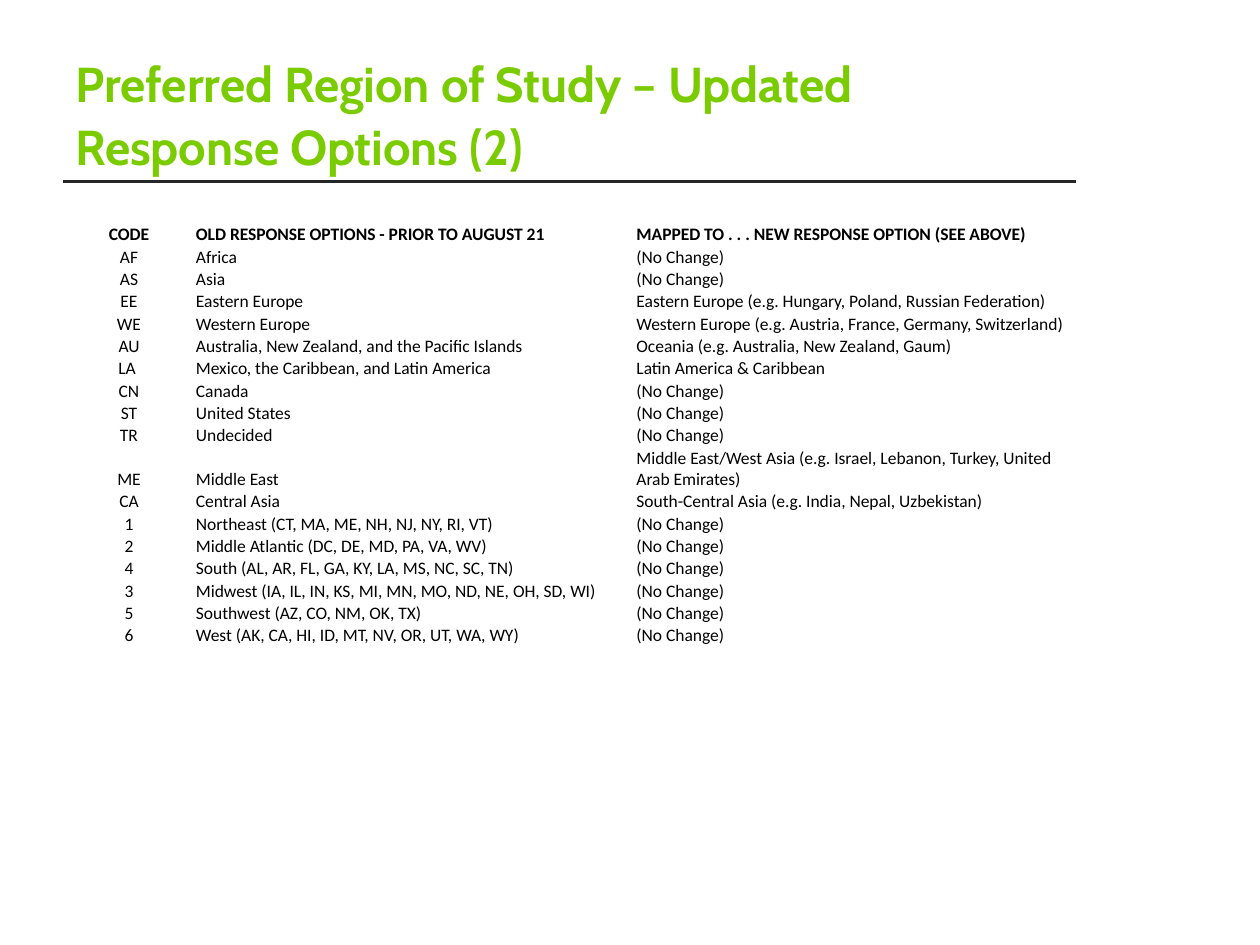
from pptx import Presentation
from pptx.dml.color import RGBColor
from pptx.enum.shapes import MSO_CONNECTOR
from pptx.enum.text import MSO_ANCHOR, PP_ALIGN
from pptx.oxml.ns import qn
from pptx.util import Cm, Pt
from lxml.etree import SubElement

TITLE = "Preferred Region of Study – Updated Response Options (2)"
HEADER = (
    "CODE",
    "OLD RESPONSE OPTIONS - PRIOR TO AUGUST 21",
    "MAPPED TO . . . NEW RESPONSE OPTION (SEE ABOVE)",
)
SAME = "(No Change)"
REGIONS = [
    ("AF", "Africa", SAME),
    ("AS", "Asia", SAME),
    ("EE", "Eastern Europe", "Eastern Europe (e.g. Hungary, Poland, Russian Federation)"),
    ("WE", "Western Europe", "Western Europe (e.g. Austria, France, Germany, Switzerland)"),
    ("AU", "Australia, New Zealand, and the Pacific Islands",
     "Oceania (e.g. Australia, New Zealand, Gaum)"),
    ("LA ", "Mexico, the Caribbean, and Latin America", "Latin America & Caribbean"),
    ("CN", "Canada", SAME),
    ("ST", "United States", SAME),
    ("TR", "Undecided", SAME),
    ("ME", "Middle East",
     "Middle East/West Asia (e.g. Israel, Lebanon, Turkey, United Arab Emirates)"),
    ("CA", "Central Asia", "South-Central Asia (e.g. India, Nepal, Uzbekistan)"),
    ("1", "Northeast (CT, MA, ME, NH, NJ, NY, RI, VT)", SAME),
    ("2", "Middle Atlantic (DC, DE, MD, PA, VA, WV)", SAME),
    ("4", "South (AL, AR, FL, GA, KY, LA, MS, NC, SC, TN)", SAME),
    ("3", "Midwest (IA, IL, IN, KS, MI, MN, MO, ND, NE, OH, SD, WI)", SAME),
    ("5", "Southwest (AZ, CO, NM, OK, TX)", SAME),
    ("6", "West (AK, CA, HI, ID, MT, NV, OR, UT, WA, WY)", SAME),
]
THEME = {
    "title": {"font": "Cabin", "size": 28, "color": "7ACC00"},
    "table": {"font": "Calibri", "size": 10, "color": "000000"},
    "rule": {"width": 1.5, "color": "262626"},
}
LEFT, WIDTH = 1.27, 20.42
TITLE_TOP, TITLE_HEIGHT = 0.89, 2.77
TABLE_TOP = 4.5
COLUMN_WIDTHS = (2.66, 8.88, 8.88)
LINE_HEIGHT = 0.43
CELL_INSET = 0.02
WRAP_LENGTH = 60


def add_span(para, text, style, bold):
    span = para.add_run()
    span.text = text
    span.font.name = style["font"]
    span.font.size = Pt(style["size"])
    span.font.bold = bold
    span.font.color.rgb = RGBColor.from_string(style["color"])


def add_rule(page):
    bottom = Cm(TITLE_TOP + TITLE_HEIGHT)
    rule = page.shapes.add_connector(
        MSO_CONNECTOR.STRAIGHT, Cm(LEFT), bottom, Cm(LEFT + WIDTH), bottom)
    rule.line.width = Pt(THEME["rule"]["width"])
    rule.line.color.rgb = RGBColor.from_string(THEME["rule"]["color"])
    SubElement(rule.element.spPr, qn("a:effectLst"))


def add_title(page):
    box = page.shapes.add_textbox(Cm(LEFT), Cm(TITLE_TOP), Cm(WIDTH), Cm(TITLE_HEIGHT))
    frame = box.text_frame
    frame.word_wrap = True
    frame.vertical_anchor = MSO_ANCHOR.BOTTOM
    para = frame.paragraphs[0]
    para.line_spacing = Pt(36)
    add_span(para, TITLE, THEME["title"], True)


def fill_cell(cell, text, is_header, is_code):
    cell.fill.background()
    cell.vertical_anchor = MSO_ANCHOR.BOTTOM
    cell.margin_left = cell.margin_right = cell.margin_top = Cm(CELL_INSET)
    cell.margin_bottom = 0
    para = cell.text_frame.paragraphs[0]
    para.alignment = PP_ALIGN.CENTER if is_code else PP_ALIGN.LEFT
    add_span(para, text, THEME["table"], is_header)


def add_region_table(page):
    rows = [HEADER, *REGIONS]
    heights = [CELL_INSET + LINE_HEIGHT * (2 if len(row[2]) > WRAP_LENGTH else 1)
               for row in rows]
    table = page.shapes.add_table(
        len(rows), len(HEADER), Cm(LEFT), Cm(TABLE_TOP), Cm(WIDTH), Cm(sum(heights))).table
    table.first_row = table.horz_banding = False
    for column, width in zip(table.columns, COLUMN_WIDTHS):
        column.width = Cm(width)
    for row_index, (row, height) in enumerate(zip(rows, heights)):
        table.rows[row_index].height = Cm(height)
        for column_index, text in enumerate(row):
            fill_cell(table.cell(row_index, column_index), text,
                      row_index == 0, column_index == 0)


def main():
    deck = Presentation()
    deck.slide_width, deck.slide_height = Cm(25.4), Cm(19.05)
    page = deck.slides.add_slide(deck.slide_layouts[6])
    add_rule(page)
    add_title(page)
    add_region_table(page)
    deck.save("out.pptx")


if __name__ == "__main__":
    main()
